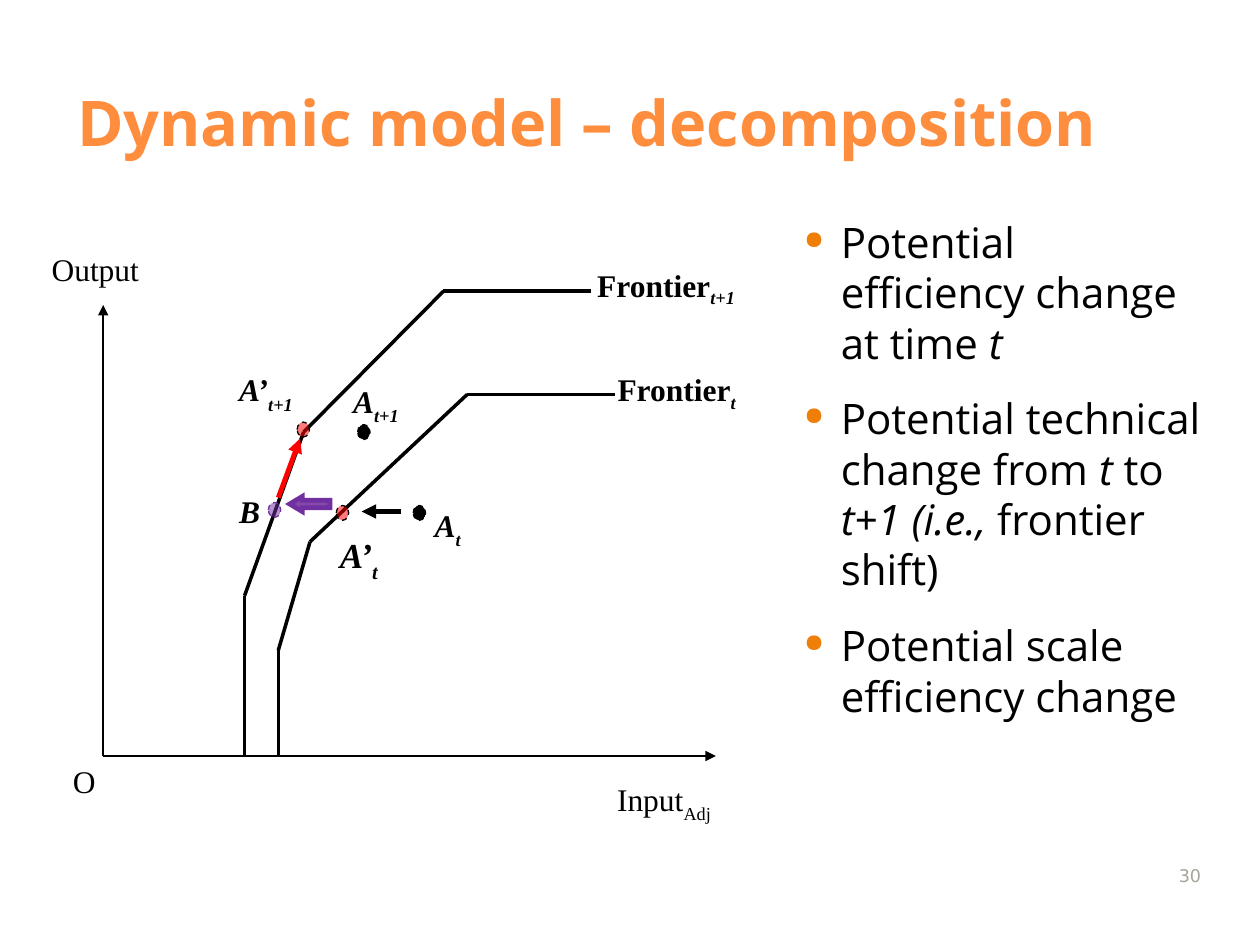
from itertools import pairwise

from lxml import etree
from pptx import Presentation
from pptx.dml.color import RGBColor
from pptx.enum.dml import MSO_LINE
from pptx.enum.shapes import MSO_CONNECTOR, MSO_SHAPE
from pptx.enum.text import MSO_ANCHOR, MSO_AUTO_SIZE, PP_ALIGN
from pptx.oxml.ns import qn
from pptx.util import Cm, Pt

STRAIGHT = MSO_CONNECTOR.STRAIGHT
OVAL, BLOCK_ARROW = MSO_SHAPE.OVAL, MSO_SHAPE.RIGHT_ARROW
BOTTOM, TOP = MSO_ANCHOR.BOTTOM, MSO_ANCHOR.TOP
LEFT, RIGHT = PP_ALIGN.LEFT, PP_ALIGN.RIGHT

THEME = {
    "title": {"font": "Open Sans", "size": 36, "color": "FF8D3E"},
    "body": {"font": "Open Sans", "size": 24, "color": "000000"},
    "label": {"font": "Times New Roman", "size": 18, "color": "000000"},
    "large label": {"font": "Times New Roman", "size": 20, "color": "000000"},
    "number": {"font": "DejaVu Sans", "size": 10, "color": "A8A49B"},
    "bullet": "F07F09",
    "black": "000000",
    "red": "FF0000",
    "purple": "7030A0",
}

# All positions are in centimetres: left, top, width, height or x, y.
TITLE = "Dynamic model – decomposition"
TITLE_BOX = (1.3, 1.32, 22.73, 2.01)
PAGE_NUMBER = "30"
NUMBER_BOX = (23.19, 16.97, 1.27, 1.02)

BULLETS_BOX = (15.7, 4.11, 8.81, 12.57)
BULLETS_INSETS = (0.51, 0.25, 0.25, 0.13)
BULLET_INDENT = 0.74
BULLETS = [  # each run: text, italic
    [("Potential efficiency change at time ", False), ("t", True)],
    [("Potential technical change from ", False), ("t", True), (" to ", False),
     ("t+1 (i.e., ", True), ("frontier shift)", False)],
    [("Potential scale efficiency change", False)],
]

ORIGIN = (2.08, 15.24)
AXIS_ENDS = [(14.43, 15.24), (2.08, 6.15)]
FRONTIERS = [
    [(5.61, 15.24), (5.61, 13.11), (6.25, 10.92), (9.42, 7.95), (12.4, 7.95)],
    [(4.93, 15.24), (4.93, 12.01), (6.12, 8.71), (8.94, 5.87), (11.91, 5.87)],
]
MOVES = [  # start, end, color
    ((8.08, 10.31), (7.29, 10.31), "black"),
    ((5.61, 10.03), (6.05, 8.84), "red"),
]
SHIFT_ARROW_BOX = (5.84, 10.01, 0.81, 0.3)

DOT_SIZE = (0.25, 0.3)
DOTS = [  # left, top, fill, line, opacity in percent
    (8.33, 10.19, "black", "black", 100),
    (6.78, 10.19, "red", "black", 52),
    (7.21, 8.56, "black", "black", 100),
    (5.99, 8.51, "red", "black", 52),
    (5.41, 10.13, "purple", "purple", 52),
]

LABELS = [  # text, subscript, box, bold, italic text, subscript offset, style
    ("Input", "Adj", (12.19, 15.6, 2.87, 1.07), False, False, -30, "label"),
    ("Output", "", (0.79, 4.92, 2.39, 1.24), False, False, 0, "label"),
    ("O", "", (1.22, 15.24, 1.07, 1.07), False, False, 0, "label"),
    ("Frontier", "t", (12.2, 7.34, 3.07, 1.07), True, False, -25, "label"),
    ("Frontier", "t+1", (11.79, 5.23, 3.48, 1.17), True, False, -25, "label"),
    ("A", "t", (8.51, 10.07, 1.35, 1.12), True, True, -30, "label"),
    ("A’", "t", (6.6, 10.63, 1.65, 1.07), True, True, -30, "large label"),
    ("A", "t+1", (6.87, 7.57, 1.68, 1.12), True, True, -30, "label"),
    ("A’", "t+1", (4.57, 7.34, 2.06, 1.12), True, True, -30, "label"),
    ("B", "", (4.57, 9.79, 0.81, 0.94), True, True, 0, "label"),
]


def lengths(values):
    return [Cm(value) for value in values]


def theme_color(name):
    return RGBColor.from_string(THEME[name])


def style_paragraph(paragraph, style, bold=False):
    look = THEME[style]
    paragraph.font.name = look["font"]
    paragraph.font.size = Pt(look["size"])
    paragraph.font.color.rgb = RGBColor.from_string(look["color"])
    paragraph.font.bold = bold


def add_text_box(slide, box, anchor=TOP):
    frame = slide.shapes.add_textbox(*lengths(box)).text_frame
    frame.word_wrap = True
    frame.vertical_anchor = anchor
    return frame


def add_line(slide, start, end, color, width, arrow=False):
    line = slide.shapes.add_connector(STRAIGHT, *lengths(start + end))
    line.line.color.rgb = theme_color(color)
    line.line.width = Pt(width)
    if arrow:
        etree.SubElement(line.line._get_or_add_ln(), qn("a:tailEnd"), type="triangle")
    etree.SubElement(line._element.spPr, qn("a:effectLst"))


def add_filled_shape(slide, kind, box, fill, line, width, opacity):
    shape = slide.shapes.add_shape(kind, *lengths(box))
    shape.shadow.inherit = False
    shape.fill.solid()
    shape.fill.fore_color.rgb = theme_color(fill)
    if opacity < 100:
        color = shape._element.spPr.find(f"{qn('a:solidFill')}/{qn('a:srgbClr')}")
        etree.SubElement(color, qn("a:alpha"), val=str(opacity * 1000))
    shape.line.color.rgb = theme_color(line)
    shape.line.width = Pt(width)
    return shape


def add_title(slide):
    title = slide.shapes.title
    title.left, title.top, title.width, title.height = lengths(TITLE_BOX)
    frame = title.text_frame
    frame.text = TITLE
    frame.auto_size = MSO_AUTO_SIZE.NONE
    frame.vertical_anchor = BOTTOM
    frame.paragraphs[0].alignment = LEFT
    style_paragraph(frame.paragraphs[0], "title", bold=True)


def add_bullets(slide):
    frame = add_text_box(slide, BULLETS_BOX)
    (frame.margin_left, frame.margin_top,
     frame.margin_right, frame.margin_bottom) = lengths(BULLETS_INSETS)
    for index, runs in enumerate(BULLETS):
        paragraph = frame.add_paragraph() if index else frame.paragraphs[0]
        style_paragraph(paragraph, "body")
        paragraph.line_spacing = 1.0
        paragraph.space_before = Pt(2.5)
        paragraph.space_after = Pt(12)
        for text, italic in runs:
            run = paragraph.add_run()
            run.text = text
            run.font.italic = italic
        properties = paragraph._p.get_or_add_pPr()
        properties.set("marL", str(Cm(BULLET_INDENT)))
        properties.set("indent", str(-Cm(BULLET_INDENT)))
        bullet_xml = [
            etree.Element(qn("a:buClr")),
            etree.Element(qn("a:buSzPct"), val="60000"),
            etree.Element(qn("a:buChar"), char="●"),
        ]
        etree.SubElement(bullet_xml[0], qn("a:srgbClr"), val=THEME["bullet"])
        run_defaults = properties.find(qn("a:defRPr"))
        for element in bullet_xml:
            run_defaults.addprevious(element)


def add_label(slide, text, subscript, box, bold, italic, offset, style):
    paragraph = add_text_box(slide, box).paragraphs[0]
    style_paragraph(paragraph, style, bold)
    run = paragraph.add_run()
    run.text = text
    run.font.italic = italic
    if subscript:
        run = paragraph.add_run()
        run.text = subscript
        run.font.italic = bold
        run._r.get_or_add_rPr().set("baseline", str(offset * 1000))


def add_diagram(slide):
    for end in AXIS_ENDS:
        add_line(slide, ORIGIN, end, "black", 1.5, arrow=True)
    for points in FRONTIERS:
        for start, end in pairwise(points):
            add_line(slide, start, end, "black", 2)
    for left, top, fill, line, opacity in DOTS:
        dot = add_filled_shape(slide, OVAL, (left, top, *DOT_SIZE), fill, line, 0.75, opacity)
        dot.line.dash_style = MSO_LINE.DASH
    for start, end, color in MOVES:
        add_line(slide, start, end, color, 2.75, arrow=True)
    shift = add_filled_shape(slide, BLOCK_ARROW, SHIFT_ARROW_BOX, "purple", "purple", 2.75, 87)
    shift.rotation = 180
    shift.adjustments[1] = 0.84
    etree.SubElement(shift.line._get_or_add_ln(), qn("a:miter"), lim="800000")
    for label in LABELS:
        add_label(slide, *label)


def main():
    presentation = Presentation()
    presentation.slide_width, presentation.slide_height = Cm(25.4), Cm(19.05)
    slide = presentation.slides.add_slide(presentation.slide_layouts[5])
    add_title(slide)
    add_bullets(slide)
    add_diagram(slide)
    number = add_text_box(slide, NUMBER_BOX, BOTTOM).paragraphs[0]
    number.text = PAGE_NUMBER
    number.alignment = RIGHT
    style_paragraph(number, "number")
    presentation.save("out.pptx")


if __name__ == "__main__":
    main()
